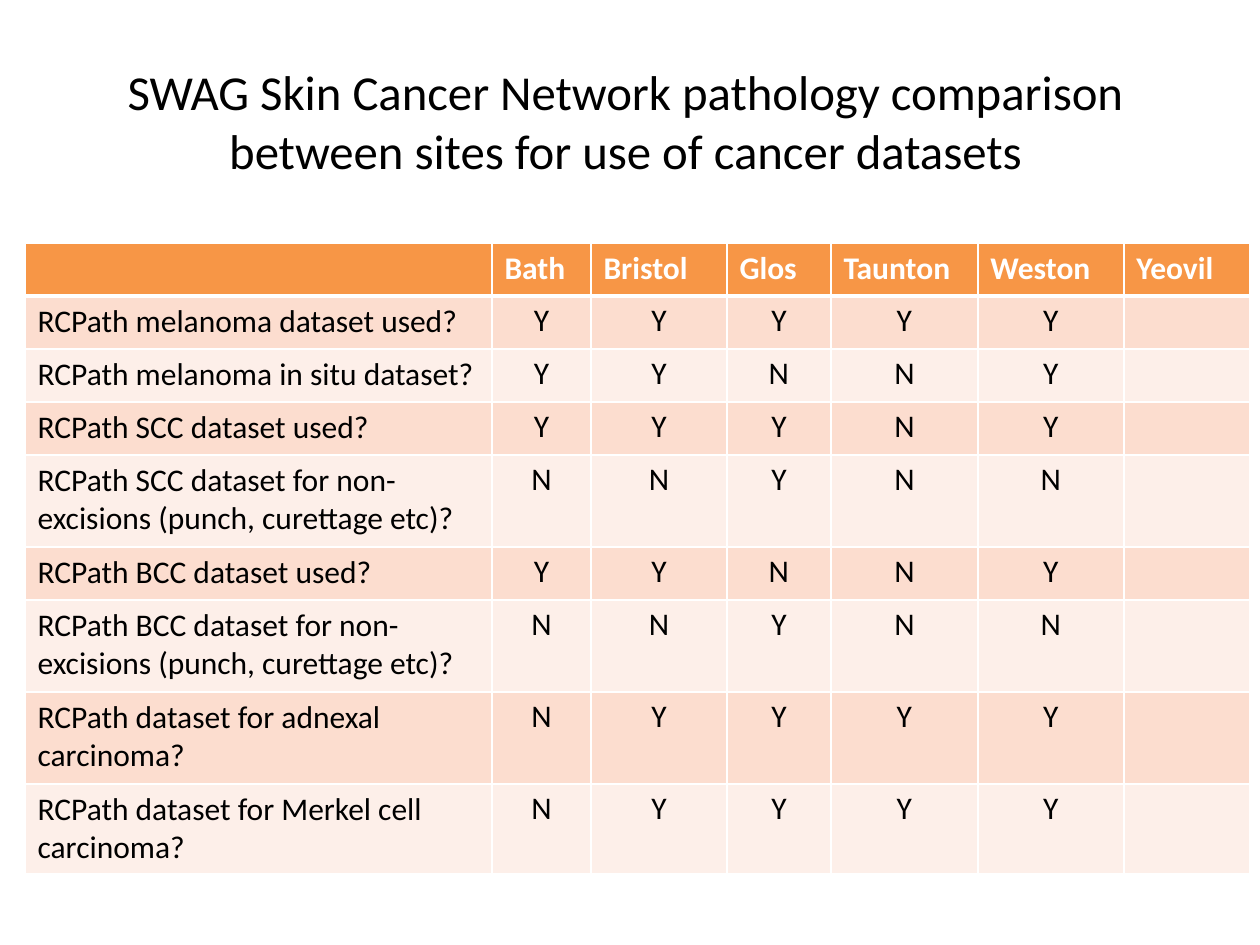
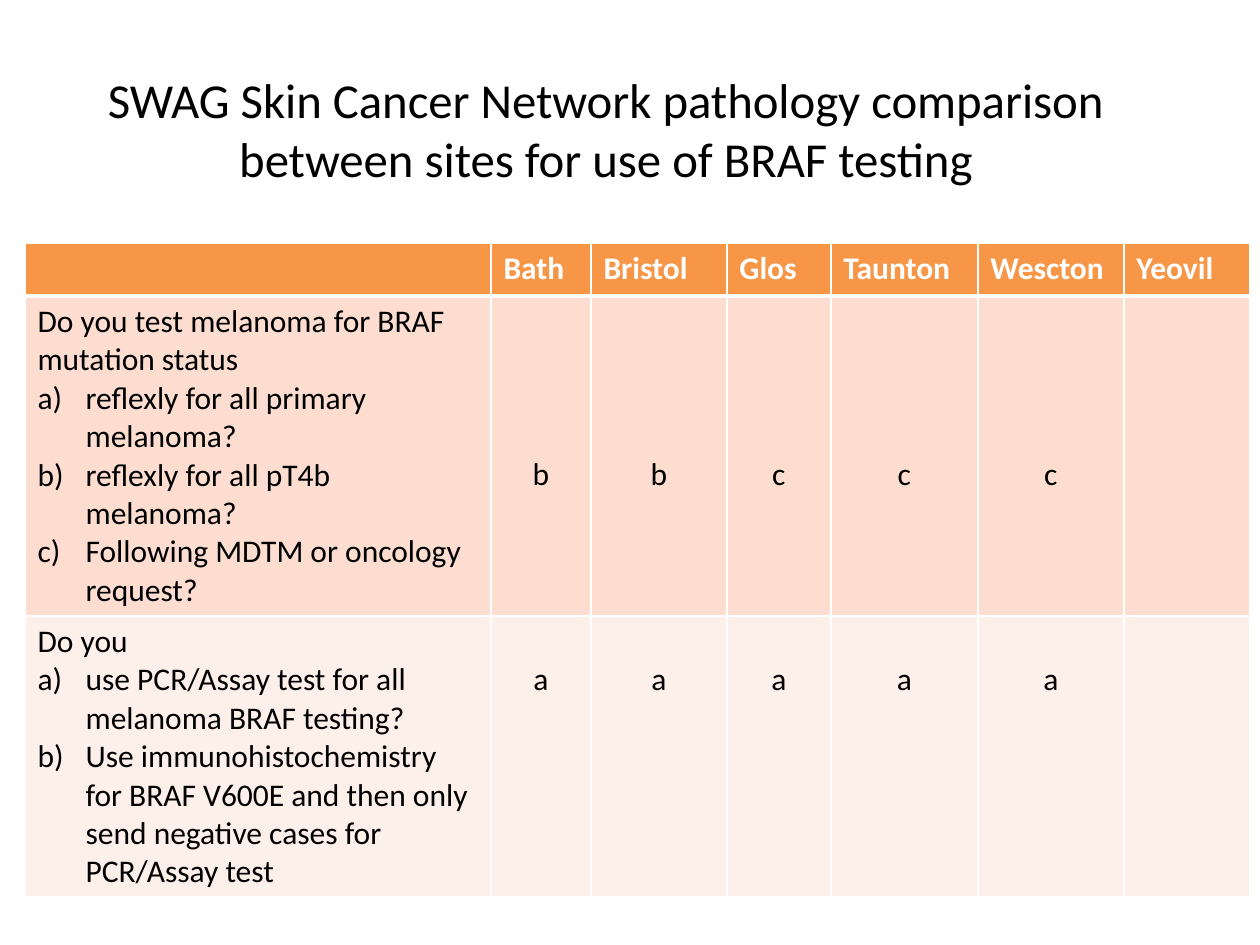
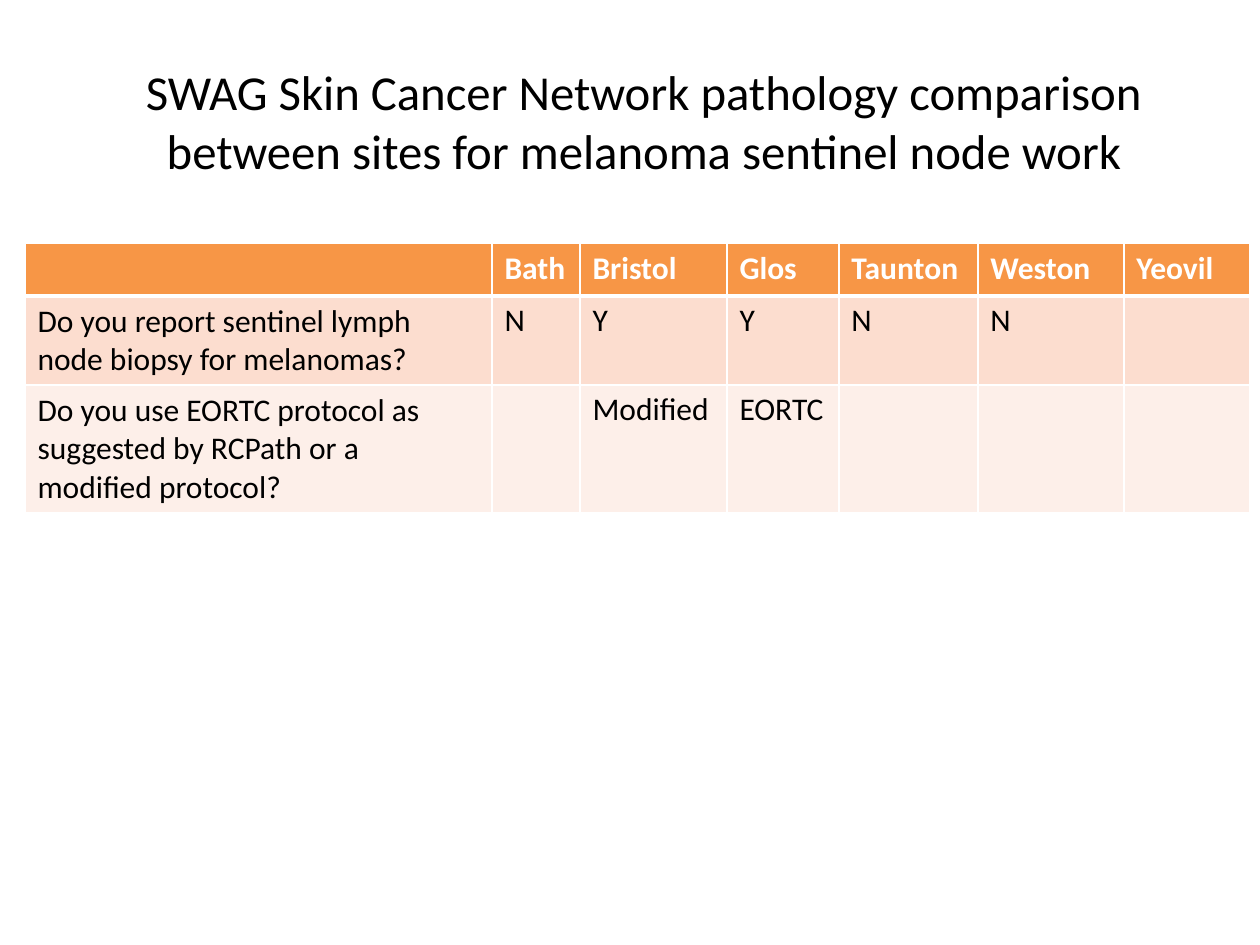
"""Build three slides comparing pathology practice between the network sites."""
from lxml.etree import SubElement
from pptx import Presentation
from pptx.dml.color import RGBColor
from pptx.enum.text import MSO_ANCHOR, PP_ALIGN
from pptx.oxml.ns import qn
from pptx.util import Emu, Pt

COLORS = {"header": "F79646", "odd": "FCDDCF", "even": "FDEFE9", "white": "FFFFFF", "black": "000000"}
FONT = "Calibri"
TITLE_START = "SWAG Skin Cancer Network pathology comparison between sites for "
TABLE_LEFT, TABLE_TOP = 25, 243
HEADER_HEIGHT = 53
CELL_MARGIN, LINE_HEIGHT = 6, 38.4
LIST_INDENT = 48

COMPARISONS = [
    {
        "topic": "use of cancer datasets",
        "title_box": (25, 38, 1201, 157),
        "sites": ["Bath", "Bristol", "Glos", "Taunton", "Weston", "Yeovil"],
        "widths": [467, 99, 136, 104, 147, 146, 126],
        "alignment": PP_ALIGN.CENTER,
        "questions": [
            (53, ["RCPath melanoma dataset used?"], "YYYYY", 0),
            (53, ["RCPath melanoma in situ dataset?"], "YYNNY", 0),
            (53, ["RCPath SCC dataset used?"], "YYYNY", 0),
            (92, ["RCPath SCC dataset for non-excisions (punch, curettage etc)?"], "NNYNN", 0),
            (53, ["RCPath BCC dataset used?"], "YYNNY", 0),
            (92, ["RCPath BCC dataset for non-excisions (punch, curettage etc)?"], "NNYNN", 0),
            (92, ["RCPath dataset for adnexal carcinoma?"], "NYYYY", 0),
            (90, ["RCPath dataset for Merkel cell carcinoma?"], "NYYYY", 0),
        ],
    },
    {
        "topic": "use of BRAF testing",
        "title_box": (25, 46, 1162, 157),
        "sites": ["Bath", "Bristol", "Glos", "Taunton", "Wescton", "Yeovil"],
        "widths": [466, 100, 136, 104, 147, 146, 126],
        "alignment": PP_ALIGN.CENTER,
        "questions": [
            (320, ["Do you test melanoma for BRAF mutation status",
                   "reflexly for all primary melanoma?",
                   "reflexly for all pT4b melanoma?",
                   "Following MDTM or oncology request?"], "bbccc", 4),
            (281, ["Do you",
                   "use PCR/Assay test for all melanoma BRAF testing?",
                   "Use immunohistochemistry for BRAF V600E and then only send "
                   "negative cases for PCR/Assay test"], "aaaaa", 1),
        ],
    },
    {
        "topic": "melanoma sentinel node work",
        "title_box": (63, 38, 1162, 157),
        "sites": ["Bath", "Bristol", "Glos", "Taunton", "Weston", "Yeovil"],
        "widths": [467, 88, 147, 112, 139, 146, 126],
        "alignment": PP_ALIGN.LEFT,
        "questions": [
            (89, ["Do you report sentinel lymph node biopsy for melanomas?"], "NYYNN", 0),
            (128, ["Do you use EORTC protocol as suggested by RCPath or a modified protocol?"],
             ["", "Modified", "EORTC"], 0),
        ],
    },
]


def px(length):
    return Emu(round(length * 914400 / 126))


def style_text(text_frame, size, color, bold, alignment):
    for paragraph in text_frame.paragraphs:
        paragraph.alignment = alignment
        for run in paragraph.runs:
            run.font.name = FONT
            run.font.size = Pt(size)
            run.font.bold = bold
            run.font.color.rgb = RGBColor.from_string(COLORS[color])


presentation = Presentation()
presentation.slide_width, presentation.slide_height = px(1260), px(945)

for comparison in COMPARISONS:
    slide = presentation.slides.add_slide(presentation.slide_layouts[6])

    title = slide.shapes.add_textbox(*map(px, comparison["title_box"])).text_frame
    title.word_wrap = True
    title.vertical_anchor = MSO_ANCHOR.MIDDLE
    title.margin_top = px(14)
    title.text = TITLE_START + comparison["topic"]
    style_text(title, 27.9, "black", False, PP_ALIGN.CENTER)

    widths, questions = comparison["widths"], comparison["questions"]
    heights = [HEADER_HEIGHT] + [question[0] for question in questions]
    table = slide.shapes.add_table(
        len(heights), len(widths), px(TABLE_LEFT), px(TABLE_TOP), px(sum(widths)), px(sum(heights))
    ).table
    table.horz_banding = False
    for column, width in zip(table.columns, widths):
        column.width = px(width)
    for row, height in zip(table.rows, heights):
        row.height = px(height)

    for column_index, site in enumerate(comparison["sites"], start=1):
        table.cell(0, column_index).text_frame.text = site
    for row_index, (_, question_lines, answers, skipped_lines) in enumerate(questions, start=1):
        question_frame = table.cell(row_index, 0).text_frame
        question_frame.text = "\n".join(question_lines)
        for paragraph in question_frame.paragraphs[1:]:
            properties = paragraph._p.get_or_add_pPr()
            properties.set("marL", str(px(LIST_INDENT)))
            properties.set("indent", str(-px(LIST_INDENT)))
            SubElement(properties, qn("a:buFont"), typeface="+mj-lt")
            SubElement(properties, qn("a:buAutoNum"), type="alphaLcParenR")
        for column_index, answer in enumerate(answers, start=1):
            answer_cell = table.cell(row_index, column_index)
            answer_cell.text_frame.text = answer
            answer_cell.margin_top = px(CELL_MARGIN + skipped_lines * LINE_HEIGHT)

    for row_index, row in enumerate(table.rows):
        is_header = row_index == 0
        fill_name = "header" if is_header else ("even", "odd")[row_index % 2]
        for column_index, cell in enumerate(row.cells):
            is_answer = not is_header and column_index > 0
            style_text(cell.text_frame, 18, "white" if is_header else "black", is_header,
                       comparison["alignment"] if is_answer else PP_ALIGN.LEFT)
            cell.fill.solid()
            cell.fill.fore_color.rgb = RGBColor.from_string(COLORS[fill_name])
            cell_properties = cell._tc.get_or_add_tcPr()
            for position, side in enumerate("LRTB"):
                under_header = (row_index, side) in [(0, "B"), (1, "T")]
                border = SubElement(cell_properties, qn(f"a:ln{side}"), w=str(Pt(3 if under_header else 1)))
                border_fill = SubElement(border, qn("a:solidFill"))
                SubElement(border_fill, qn("a:srgbClr"), val=COLORS["white"])
                cell_properties.insert(position, border)

presentation.save("out.pptx")
